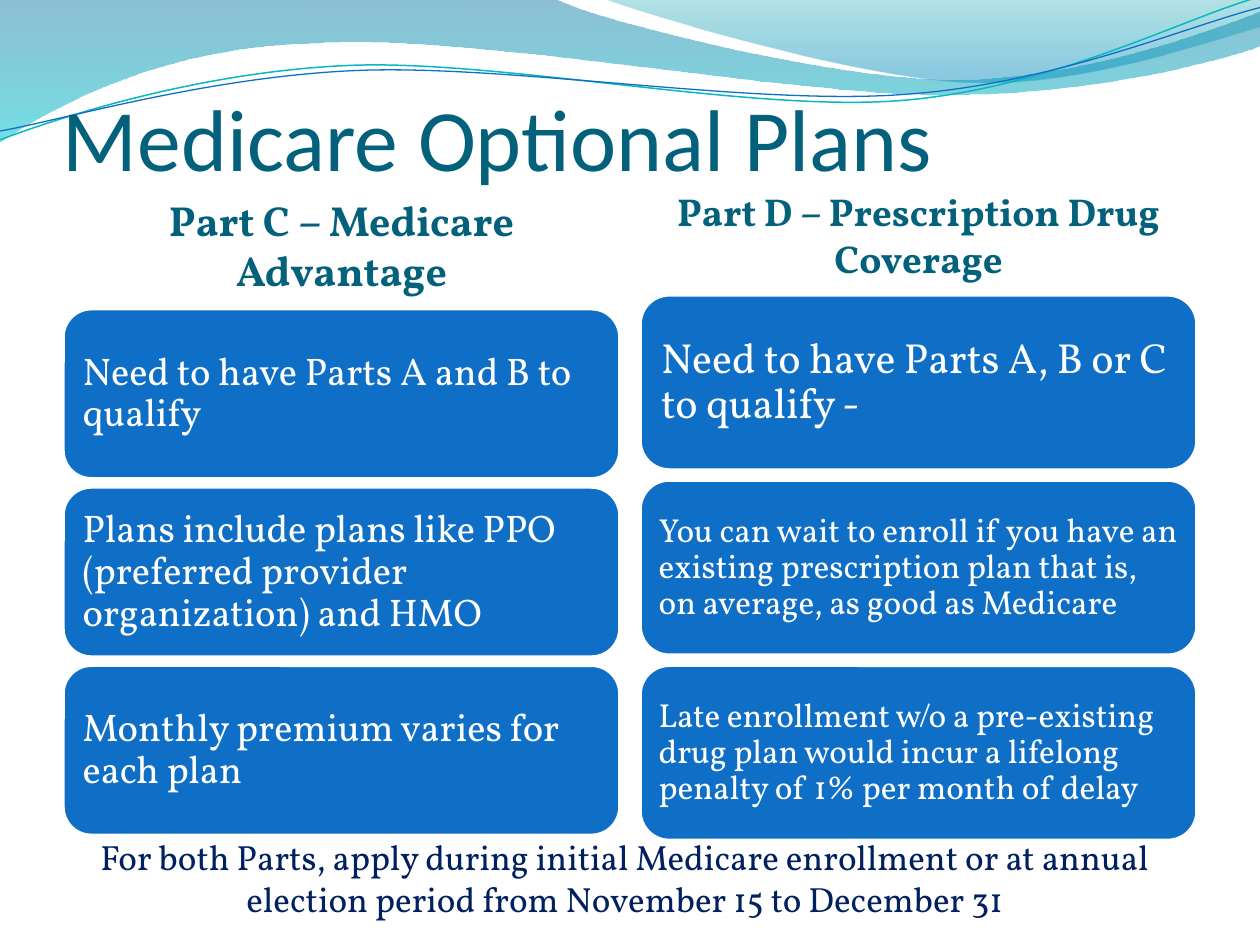
"""Build the Medicare optional plans slide."""
from lxml.etree import SubElement
from pptx import Presentation
from pptx.dml.color import RGBColor
from pptx.enum.shapes import MSO_SHAPE
from pptx.enum.text import MSO_ANCHOR, PP_ALIGN
from pptx.oxml.ns import qn
from pptx.util import Inches, Pt

color = RGBColor.from_string
presentation = Presentation()
presentation.slide_width, presentation.slide_height = Inches(10), Inches(7.5)
slide = presentation.slides.add_slide(presentation.slide_layouts[6])


def draw_wave(segments, closed):
    """Draw straight segments (one point) and Bezier segments (three points)."""
    points = [(Inches(x), Inches(y)) for segment in segments for x, y in segment]
    builder = slide.shapes.build_freeform(*points[0])
    builder.add_line_segments(points[1:], close=closed)
    shape = builder.convert_to_shape()
    shape.shadow.inherit = False
    pieces = iter(shape.element.spPr.findall(".//" + qn("a:lnTo")))
    for segment in segments[1:]:
        first, *others = [next(pieces) for _ in segment]
        for other in others:
            first.append(other[0])
            other.getparent().remove(other)
        if others:
            first.tag = qn("a:cubicBezTo")
    return shape


def write_text(shape, text, size, text_color, font="Vollkorn", bold=False,
               align=PP_ALIGN.LEFT, anchor=MSO_ANCHOR.MIDDLE, margins=(0.1, 0.05, 0.1, 0.05)):
    """Fill a shape with one paragraph and return the paragraph."""
    frame = shape.text_frame
    frame.word_wrap = True
    frame.vertical_anchor = anchor
    frame.margin_left, frame.margin_top, frame.margin_right, frame.margin_bottom = map(Inches, margins)
    paragraph = frame.paragraphs[0]
    paragraph.alignment = align
    run = paragraph.add_run()
    run.text = text
    run.font.name, run.font.size, run.font.bold = font, Pt(size), bold
    run.font.color.rgb = color(text_color)
    return paragraph


bands = [
    ([[(0, 0)], [(4.4, -0.01)],
      [(4.76, 0.17), (6.64, 0.63), (7.58, 0.63)], [(8.53, 0.63), (9.58, 0.26), (10, 0.09)],
      [(10.01, 0.36)],
      [(9.83, 0.44), (8.7, 0.76), (7.46, 0.75)], [(6.22, 0.75), (3.82, 0.28), (2.57, 0.34)],
      [(1.29, 0.36), (0.46, 0.83), (-0.01, 1.13)]],
     [(0, "0074A1", 45), (1, "00C6CF", 55)]),
    ([[(4.79, -0.01)],
      [(5.09, 0.11), (6.82, 0.62), (7.69, 0.65)], [(8.56, 0.69), (9.61, 0.32), (10, 0.21)],
      [(10, 0)]],
     [(0, "00A1A9", 30), (0.8, "008BBF", 45)]),
]
for segments, stops in bands:
    band = draw_wave(segments, True)
    band.line.fill.background()
    band.fill.gradient()
    band.fill.gradient_angle = 270
    for stop, (position, stop_color, _) in zip(band.fill.gradient_stops, stops):
        stop.position = position
        stop.color.rgb = color(stop_color)
    color_elements = band.element.spPr.findall(".//" + qn("a:srgbClr"))
    for element, (_, _, opacity) in zip(color_elements, stops):
        SubElement(element, qn("a:alpha")).set("val", str(opacity * 1000))

ripples = [
    ([[(0, 1.11)], [(0.48, 0.93), (1.58, 0.57), (2.77, 0.52)],
      [(3.95, 0.47), (5.93, 0.89), (7.13, 0.8)], [(8.33, 0.71), (9.38, 0.15), (9.98, -0.02)]],
     "0AB8BF", 0.85),
    ([[(0, 1.04)], [(0.47, 0.96), (1.64, 0.61), (2.83, 0.56)],
      [(4.03, 0.51), (5.97, 0.84), (7.17, 0.75)], [(8.36, 0.67), (9.41, 0.21), (10, 0.06)]],
     "0F6FC6", 0.75),
]
for segments, line_color, width in ripples:
    ripple = draw_wave(segments, False)
    ripple.fill.background()
    ripple.line.color.rgb = color(line_color)
    ripple.line.width = Pt(width)

title = slide.shapes.add_textbox(Inches(0.5), Inches(0.25), Inches(9), Inches(1.25))
write_text(title, "Medicare Optional Plans", 50, "04617B", font="Calibri",
           anchor=MSO_ANCHOR.BOTTOM, margins=(0, 0.05, 0, 0))

column_width, last_top = 4.42, 5.28
columns = [
    (0.5, 1.58, "Part C – Medicare Advantage", 24, 2.45, 1.35, [
        ("Need to have Parts A and B to qualify", 22, 0.09),
        ("Plans include plans like PPO (preferred provider organization) and HMO", 22, 0.09),
        ("Monthly premium varies for each plan", 22, 0.09)]),
    (5.08, 1.5, "Part D – Prescription Drug Coverage", 22.2, 2.34, 1.39, [
        ("Need to have Parts A, B or C to qualify -", 24, 0.1),
        ("You can wait to enroll if you have an existing prescription plan that is, "
         "on average, as good as Medicare", 19, 0.08),
        ("Late enrollment w/o a pre-existing drug plan would incur a lifelong "
         "penalty of 1% per month of delay", 19, 0.08)]),
]
for left, heading_top, heading_text, heading_size, first_top, height, cards in columns:
    heading = slide.shapes.add_textbox(Inches(left), Inches(heading_top), Inches(column_width), Inches(0.72))
    paragraph = write_text(heading, heading_text, heading_size, "04617B", bold=True,
                           align=PP_ALIGN.CENTER, margins=(0.05, 0, 0.05, 0))
    paragraph.space_before = Pt(5)
    pitch = (last_top - first_top) / (len(cards) - 1)
    for row, (text, size, margin) in enumerate(cards):
        card = slide.shapes.add_shape(MSO_SHAPE.ROUNDED_RECTANGLE, Inches(left),
                                      Inches(first_top + row * pitch), Inches(column_width), Inches(height))
        card.shadow.inherit = False
        card.fill.solid()
        card.fill.fore_color.rgb = color("0F6FC6")
        card.line.color.rgb = color("FFFFFF")
        card.line.width = Pt(2)
        write_text(card, text, size, "FFFFFF", margins=(margin,) * 4).line_spacing = 0.9

footer = slide.shapes.add_textbox(Inches(0.5), Inches(6.58), Inches(8.92), Inches(0.77))
write_text(footer, "For both Parts, apply during initial Medicare enrollment or at annual "
           "election period from November 15 to December 31", 20, "002060",
           align=PP_ALIGN.CENTER, anchor=MSO_ANCHOR.TOP)

presentation.save("out.pptx")
